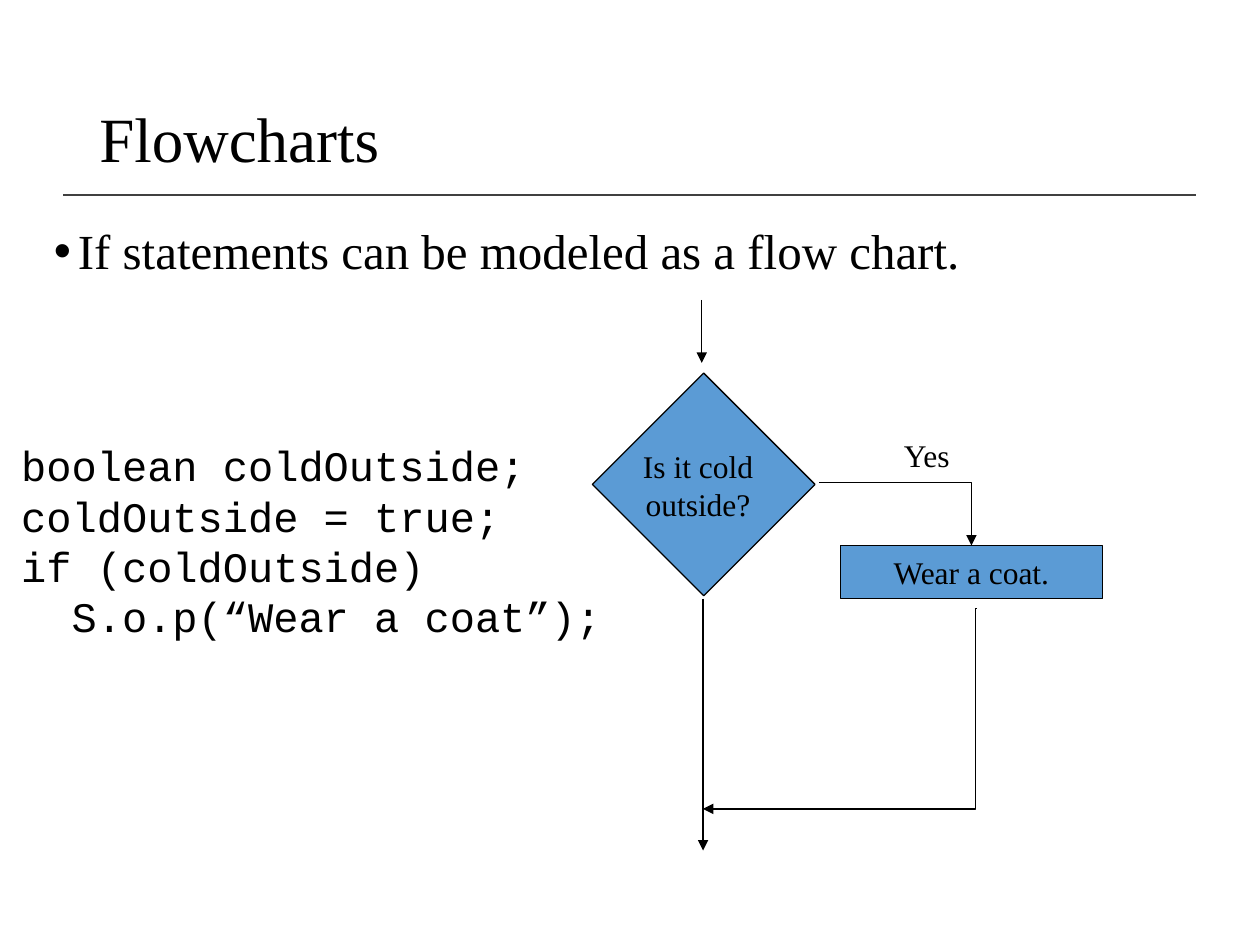
from lxml.etree import SubElement
from pptx import Presentation
from pptx.dml.color import RGBColor
from pptx.enum.shapes import MSO_CONNECTOR, MSO_SHAPE
from pptx.enum.text import MSO_ANCHOR, PP_ALIGN
from pptx.oxml.ns import qn
from pptx.util import Inches, Pt

BLACK = RGBColor(0x00, 0x00, 0x00)
GRAY = RGBColor(0x40, 0x40, 0x40)
BLUE = RGBColor(0x5B, 0x9B, 0xD5)


class FlowchartSlide:
    serif = "Times New Roman"
    monospace = "Courier New"
    label_size = 18
    line_width = 0.75

    def __init__(self, presentation):
        self.slide = presentation.slides.add_slide(presentation.slide_layouts[6])

    def fill_text(self, text_frame, lines, size, font=serif, align=PP_ALIGN.LEFT,
                  anchor=MSO_ANCHOR.TOP, wrap=True, spacing=None):
        text_frame.word_wrap = wrap
        text_frame.vertical_anchor = anchor
        for index, line in enumerate(lines):
            paragraph = text_frame.add_paragraph() if index else text_frame.paragraphs[0]
            paragraph.text = line
            paragraph.alignment = align
            paragraph.line_spacing = spacing
            paragraph.font.name = font
            paragraph.font.size = Pt(size)
            paragraph.font.color.rgb = BLACK

    def text(self, left, top, width, height, lines, size, **style):
        shape = self.slide.shapes.add_textbox(
            Inches(left), Inches(top), Inches(width), Inches(height))
        self.fill_text(shape.text_frame, lines, size, **style)
        return shape

    def label(self, left, top, width, height, lines):
        return self.text(left, top, width, height, lines, self.label_size,
                         align=PP_ALIGN.CENTER, wrap=False)

    def bullet(self, left, top, width, height, line, size):
        shape = self.text(left, top, width, height, [line], size, spacing=0.9)
        paragraph = shape.text_frame.paragraphs[0]
        paragraph.space_before = Pt(7.5)
        properties = paragraph._p.get_or_add_pPr()
        properties.set("marL", str(Inches(0.19)))
        properties.set("indent", str(Inches(-0.19)))
        bullet_font = SubElement(properties, qn("a:buFont"))
        bullet_font.set("typeface", "Arial")
        bullet_character = SubElement(properties, qn("a:buChar"))
        bullet_character.set("char", "•")
        default_font = properties.find(qn("a:defRPr"))
        if default_font is not None:
            properties.append(default_font)

    def box(self, left, top, width, height, lines=(), rotation=0):
        shape = self.slide.shapes.add_shape(
            MSO_SHAPE.RECTANGLE, Inches(left), Inches(top), Inches(width), Inches(height))
        shape.shadow.inherit = False
        shape.rotation = rotation
        shape.fill.solid()
        shape.fill.fore_color.rgb = BLUE
        shape.line.color.rgb = BLACK
        shape.line.width = Pt(self.line_width)
        self.fill_text(shape.text_frame, lines, self.label_size, align=PP_ALIGN.CENTER,
                       anchor=MSO_ANCHOR.MIDDLE, wrap=False)

    def line(self, start, end, color=BLACK, width=line_width, kind=MSO_CONNECTOR.STRAIGHT):
        connector = self.slide.shapes.add_connector(
            kind, *(Inches(value) for value in (*start, *end)))
        connector.line.color.rgb = color
        connector.line.width = Pt(width)
        SubElement(connector._element.spPr, qn("a:effectLst"))
        return connector

    def arrow(self, start, end, **style):
        connector = self.line(start, end, **style)
        outline = connector._element.spPr.find(qn("a:ln"))
        SubElement(outline, qn("a:tailEnd")).set("type", "triangle")
        return connector

    def bent_arrow(self, start, end, preset, adjustment=None):
        connector = self.arrow(start, end, kind=MSO_CONNECTOR.ELBOW)
        geometry = connector._element.spPr.find(qn("a:prstGeom"))
        geometry.set("prst", preset)
        if adjustment is not None:
            guide = SubElement(geometry.find(qn("a:avLst")), qn("a:gd"))
            guide.set("name", "adj1")
            guide.set("fmla", f"val {adjustment}")


def main():
    presentation = Presentation()
    presentation.slide_width = Inches(10)
    presentation.slide_height = Inches(7.5)
    page = FlowchartSlide(presentation)

    page.line((0.5, 1.55), (9.49, 1.55), color=GRAY, width=1)
    page.text(0.69, 0.4, 8.62, 1.45, ["Flowcharts"], 36,
              anchor=MSO_ANCHOR.MIDDLE, spacing=0.9)
    page.bullet(0.33, 1.75, 9.07, 1.13, "If statements can be modeled as a flow chart.", 28)

    page.box(4.96, 3.22, 1.25, 1.25, rotation=45)
    page.box(6.67, 4.33, 2.08, 0.42, ["Wear a coat."])
    page.bent_arrow((6.5, 3.83), (7.71, 4.33), "bentConnector2")
    page.label(7.06, 3.41, 0.59, 0.4, ["Yes"])
    page.arrow((5.58, 4.75), (5.58, 6.75))
    page.bent_arrow((7.75, 4.83), (5.58, 6.42), "bentConnector3", adjustment=200)
    page.arrow((5.57, 2.38), (5.57, 2.88))
    page.label(5, 3.5, 1.08, 0.7, ["Is it cold", "outside?"])

    page.text(0.07, 3.44, 5.11, 1.72, [
        "boolean coldOutside;",
        "coldOutside = true;",
        "if (coldOutside)",
        "  S.o.p(“Wear a coat”);",
    ], 24, font=page.monospace)

    presentation.save("out.pptx")


if __name__ == "__main__":
    main()
